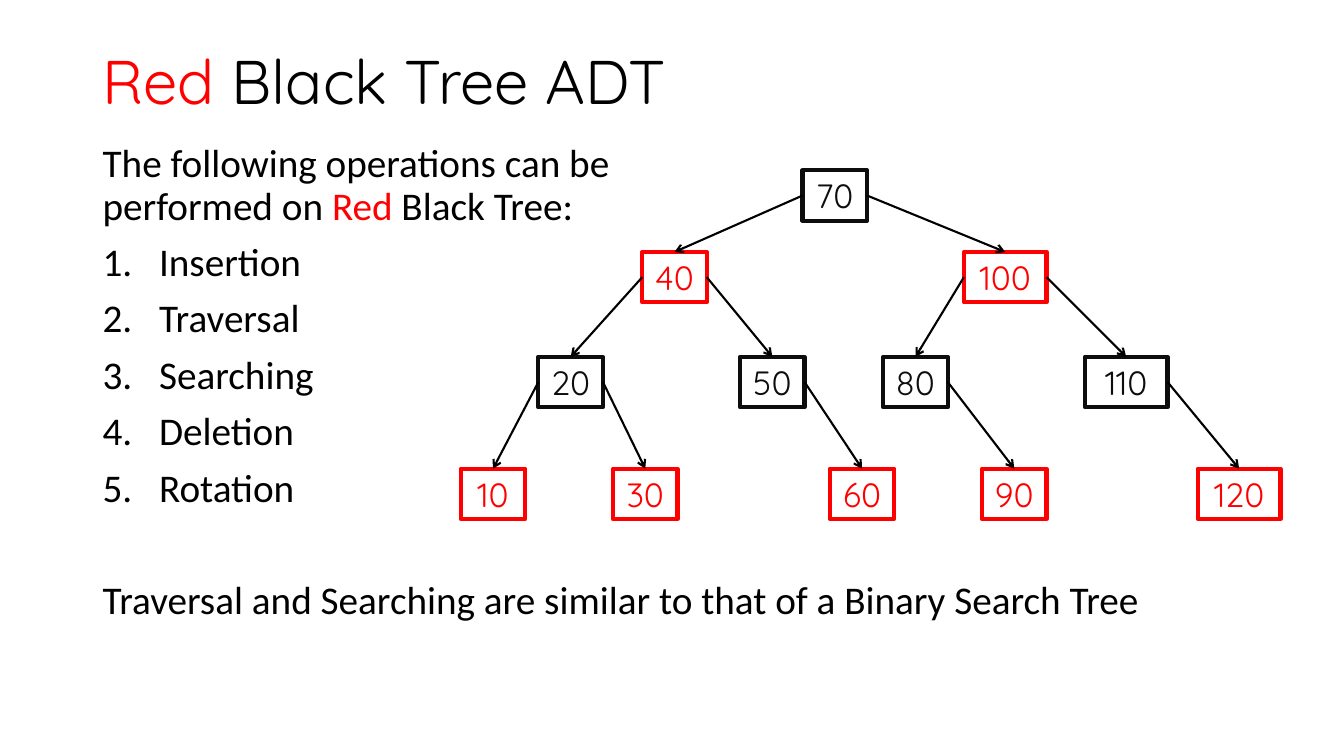
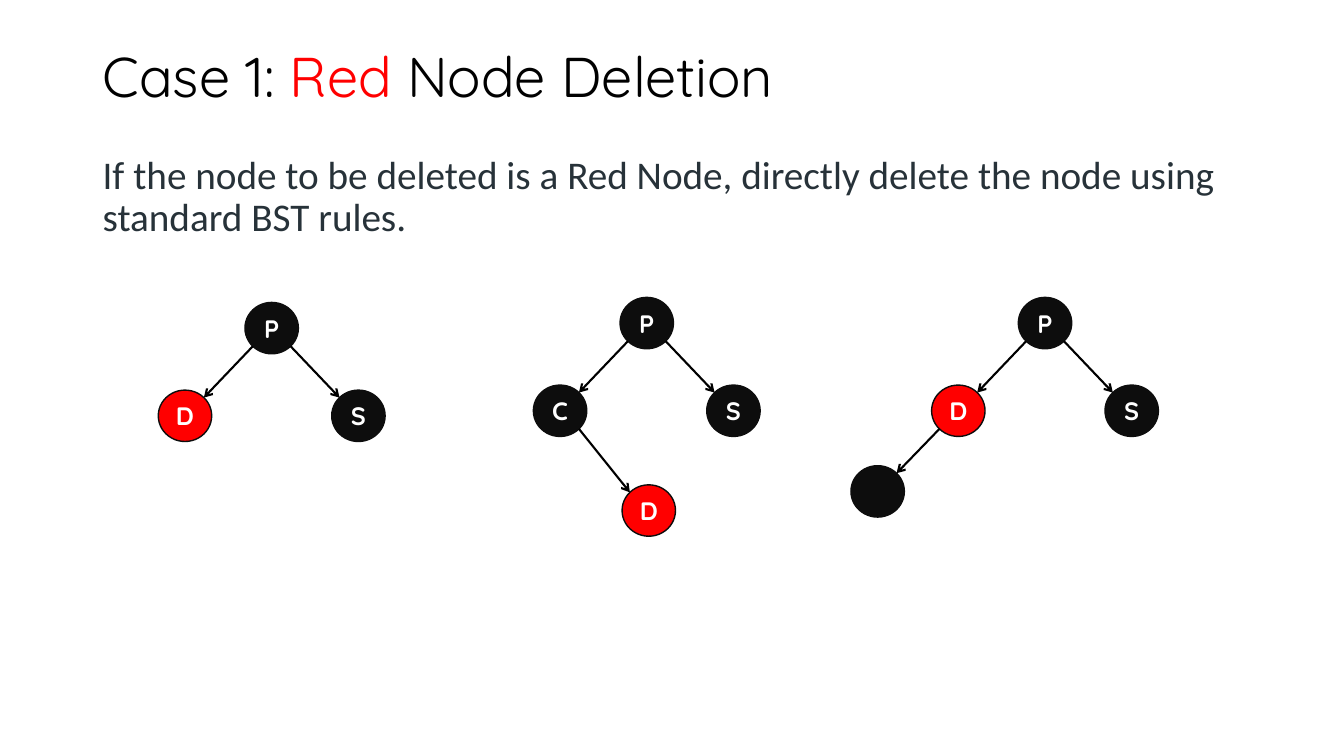
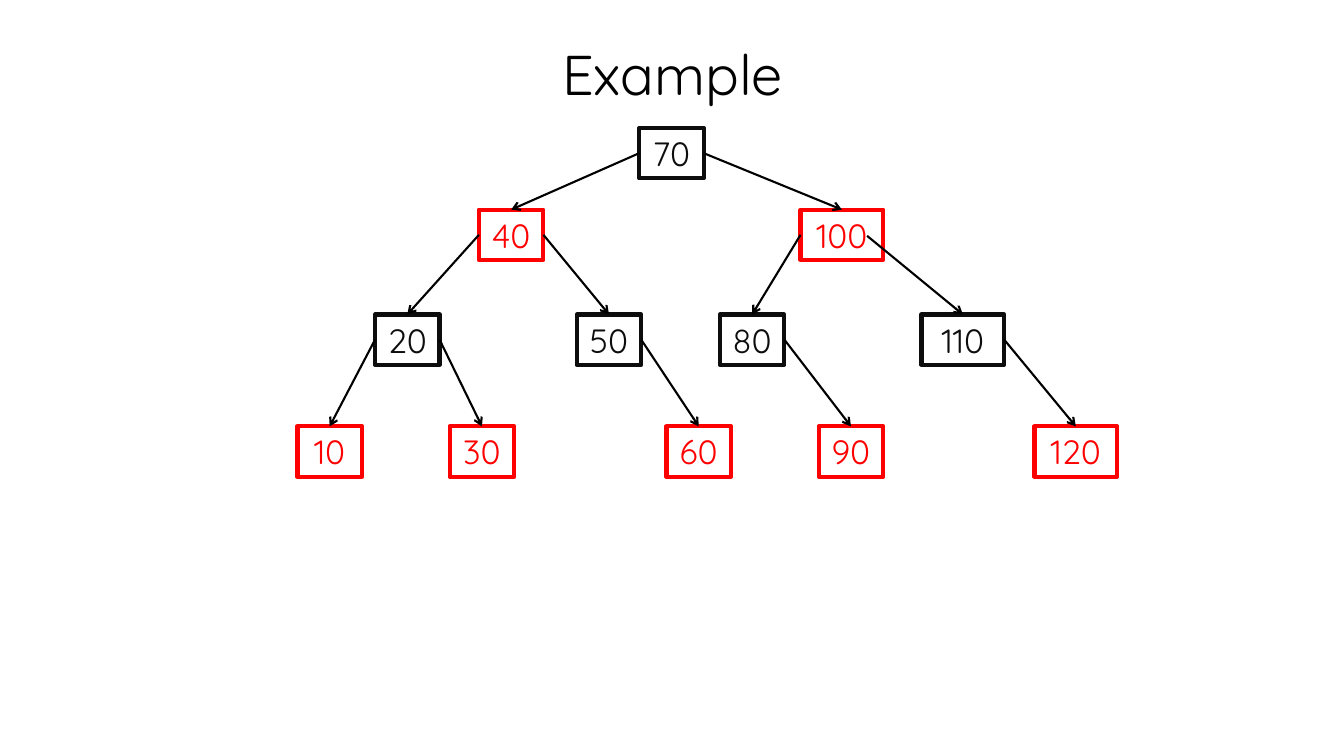
from dataclasses import dataclass
from math import sqrt

from lxml.etree import SubElement
from pptx import Presentation
from pptx.dml.color import RGBColor as RGB
from pptx.enum.shapes import MSO_CONNECTOR as CONNECTOR, MSO_SHAPE as SHAPE
from pptx.enum.text import MSO_ANCHOR as ANCHOR, PP_ALIGN as ALIGN
from pptx.oxml.ns import qn
from pptx.util import Inches, Pt


@dataclass(frozen=True)
class Theme:
    """Colours, fonts and type sizes of the deck."""

    red: RGB = RGB(0xFF, 0x00, 0x00)
    black: RGB = RGB(0x00, 0x00, 0x00)
    ink: RGB = RGB(0x0D, 0x0D, 0x0D)
    slate: RGB = RGB(0x27, 0x32, 0x39)
    white: RGB = RGB(0xFF, 0xFF, 0xFF)
    display: str = "Quicksand"
    text: str = "Calibri"
    cover: int = 44
    title: int = 40
    body: int = 28
    key: int = 24
    letter: int = 18


THEME = Theme()
LEFT, WIDTH = 0.92, 11.5

KEY_HEIGHT = 0.5
LEVEL_TOPS = (0, 0.81, 1.85, 2.96)
KEY_LEVELS = (
    {70: 3.39},
    {40: 1.8, 100: 4.99},
    {20: 0.77, 50: 2.77, 80: 4.19, 110: 6.19},
    {10: 0, 30: 1.51, 60: 3.66, 90: 5.17, 120: 7.31},
)
KEY_CHILDREN = {70: (40, 100), 40: (20, 50), 100: (80, 110),
                20: (10, 30), 50: (60,), 80: (90,), 110: (120,)}

NODE_WIDTH, NODE_HEIGHT = 0.53, 0.51
CHILD_X, CHILD_Y = 0.86, 0.87


def style(paragraph, face, size, color, bold=None):
    """Set the font that all runs of a paragraph share."""
    font = paragraph.font
    font.name, font.size, font.bold = face, Pt(size), bold
    font.color.rgb = color


def add_words(paragraph, *words):
    """Add runs, colouring those given as a (text, colour) pair."""
    for word in words:
        text, color = word if isinstance(word, tuple) else (word, None)
        run = paragraph.add_run()
        run.text = text
        if color is not None:
            run.font.color.rgb = color


def add_frame(slide, box, anchor=ANCHOR.TOP):
    """Add a wrapping text box and return its text frame."""
    frame = slide.shapes.add_textbox(*map(Inches, box)).text_frame
    frame.word_wrap = True
    frame.vertical_anchor = anchor
    return frame


def add_title(slide, top, height, *words, size=THEME.title, align=ALIGN.LEFT):
    """Add the slide title."""
    title = add_frame(slide, (LEFT, top, WIDTH, height), ANCHOR.MIDDLE).paragraphs[0]
    title.alignment, title.line_spacing = align, 0.9
    style(title, THEME.display, size, THEME.black)
    add_words(title, *words)


def add_arrow(slide, start, end):
    """Add a straight arrow between two points in inches."""
    arrow = slide.shapes.add_connector(CONNECTOR.STRAIGHT, *map(Inches, start + end))
    arrow.line.color.rgb = THEME.black
    arrow.line.width = Pt(1.5)
    SubElement(arrow.line._get_or_add_ln(), qn("a:tailEnd"), type="arrow")
    SubElement(arrow._element.spPr, qn("a:effectLst"))
    return arrow


def add_node(slide, kind, box, label, face_size, color, line, width, fill=None, bold=None):
    """Add one labelled tree node."""
    node = slide.shapes.add_shape(kind, *map(Inches, box))
    node.shadow.inherit = False
    if fill is None:
        node.fill.background()
    else:
        node.fill.solid()
        node.fill.fore_color.rgb = fill
    node.line.color.rgb, node.line.width = line, Pt(width)
    frame = node.text_frame
    frame.margin_left = frame.margin_right = frame.margin_top = frame.margin_bottom = 0
    frame.word_wrap = False
    frame.vertical_anchor = ANCHOR.MIDDLE
    if label:
        caption = frame.paragraphs[0]
        caption.alignment = ALIGN.CENTER
        style(caption, THEME.display, face_size, color, bold)
        add_words(caption, label)
    return node


def add_key_tree(slide, left, top, loose_starts=None):
    """Draw the search tree of keys, with any loose arrow starts given by child key."""
    loose_starts = loose_starts or {}
    nodes = {}
    for level, (keys, level_top) in enumerate(zip(KEY_LEVELS, LEVEL_TOPS)):
        color = THEME.red if level % 2 else THEME.ink
        for key, x in keys.items():
            box = (left + x, top + level_top, 0.64 if key < 100 else 0.82, KEY_HEIGHT)
            nodes[key] = add_node(slide, SHAPE.RECTANGLE, box, str(key),
                                  THEME.key, color, color, 3)
    for parent, children in KEY_CHILDREN.items():
        for child in children:
            start = loose_starts.get(child)
            arrow = add_arrow(slide, start or (left, top), (left, top))
            if start is None:
                arrow.begin_connect(nodes[parent], 1 if child < parent else 3)
            arrow.end_connect(nodes[child], 0)


def add_letter_tree(slide, left, top, first, second, grandchild=None):
    """Draw a parent P with two children and maybe a (letter, dx, dy) under the first."""
    places = [("P", 0, 0), (first, -CHILD_X, CHILD_Y), (second, CHILD_X, CHILD_Y)]
    edges = [(0, 1), (0, 2)]
    if grandchild:
        letter, dx, dy = grandchild
        places.append((letter, dx - CHILD_X, dy + CHILD_Y))
        edges.append((1, 3))
    for letter, x, y in places:
        add_node(slide, SHAPE.OVAL, (left + x, top + y, NODE_WIDTH, NODE_HEIGHT), letter,
                 THEME.letter, THEME.white, THEME.ink, 1,
                 THEME.red if letter == "D" else THEME.ink, True)
    reach_x, reach_y = NODE_WIDTH / sqrt(8), NODE_HEIGHT / sqrt(8)
    for parent, child in edges:
        (px, py), (cx, cy) = [(left + x + NODE_WIDTH / 2, top + y + NODE_HEIGHT / 2)
                              for _, x, y in (places[parent], places[child])]
        side = reach_x if cx > px else -reach_x
        add_arrow(slide, (px + side, py + reach_y), (cx - side, cy - reach_y))


def add_operations(slide, box):
    """List the operations of the tree between an opening and a closing line."""
    frame = add_frame(slide, box)

    def add_line(space, numbered=False):
        line = frame.add_paragraph() if space else frame.paragraphs[0]
        line.line_spacing = 0.9
        if space:
            line.space_before = Pt(space)
        if numbered:
            properties = line._p.get_or_add_pPr()
            properties.set("marL", str(Inches(0.56)))
            properties.set("indent", str(Inches(-0.56)))
            SubElement(properties, qn("a:buFont"), typeface="+mj-lt")
            SubElement(properties, qn("a:buAutoNum"), type="arabicPeriod")
        style(line, THEME.text, THEME.body, THEME.black)
        return line

    opening = add_line(0)
    add_words(opening, "The following operations can be")
    opening.add_line_break()
    add_words(opening, "performed on ", ("Red", THEME.red), " Black Tree:")
    for operation in ("Insertion", "Traversal", "Searching", "Deletion", "Rotation"):
        add_words(add_line(10, numbered=True), operation)
    add_words(add_line(50),
              "Traversal and Searching are similar to that of a Binary Search Tree")


def build_operations(slide):
    """Build the slide on the tree's operations."""
    add_title(slide, 0.4, 0.88, ("Red", THEME.red), " Black Tree ADT", size=THEME.cover)
    add_operations(slide, (LEFT, 1.38, WIDTH, 5.38))
    add_key_tree(slide, 4.57, 1.69)


def build_deletion(slide):
    """Build the slide on deleting a red node."""
    add_title(slide, 0.42, 0.73, "Case 1: ", ("Red", THEME.red), " Node Deletion")
    rule = add_frame(slide, (LEFT, 1.49, WIDTH, 4.76)).paragraphs[0]
    rule.line_spacing = 0.9
    style(rule, THEME.text, THEME.body, THEME.slate)
    add_words(rule, "If the node to be deleted is a Red Node, directly delete "
                    "the node using standard BST rules.")
    add_letter_tree(slide, 2.43, 3, "D", "S")
    add_letter_tree(slide, 6.15, 2.95, "C", "S", ("D", 0.88, 0.99))
    add_letter_tree(slide, 10.1, 2.95, "D", "S", ("", -0.8, 0.8))


def build_example(slide):
    """Build the example slide."""
    add_title(slide, 0.4, 0.74, "Example", align=ALIGN.CENTER)
    add_key_tree(slide, 2.95, 1.27, {110: (8.6, 2.34)})


def main():
    """Build and save the deck."""
    deck = Presentation()
    deck.slide_width, deck.slide_height = Inches(13.33), Inches(7.5)
    for build in (build_operations, build_deletion, build_example):
        build(deck.slides.add_slide(deck.slide_layouts[6]))
    deck.save("out.pptx")


if __name__ == "__main__":
    main()
